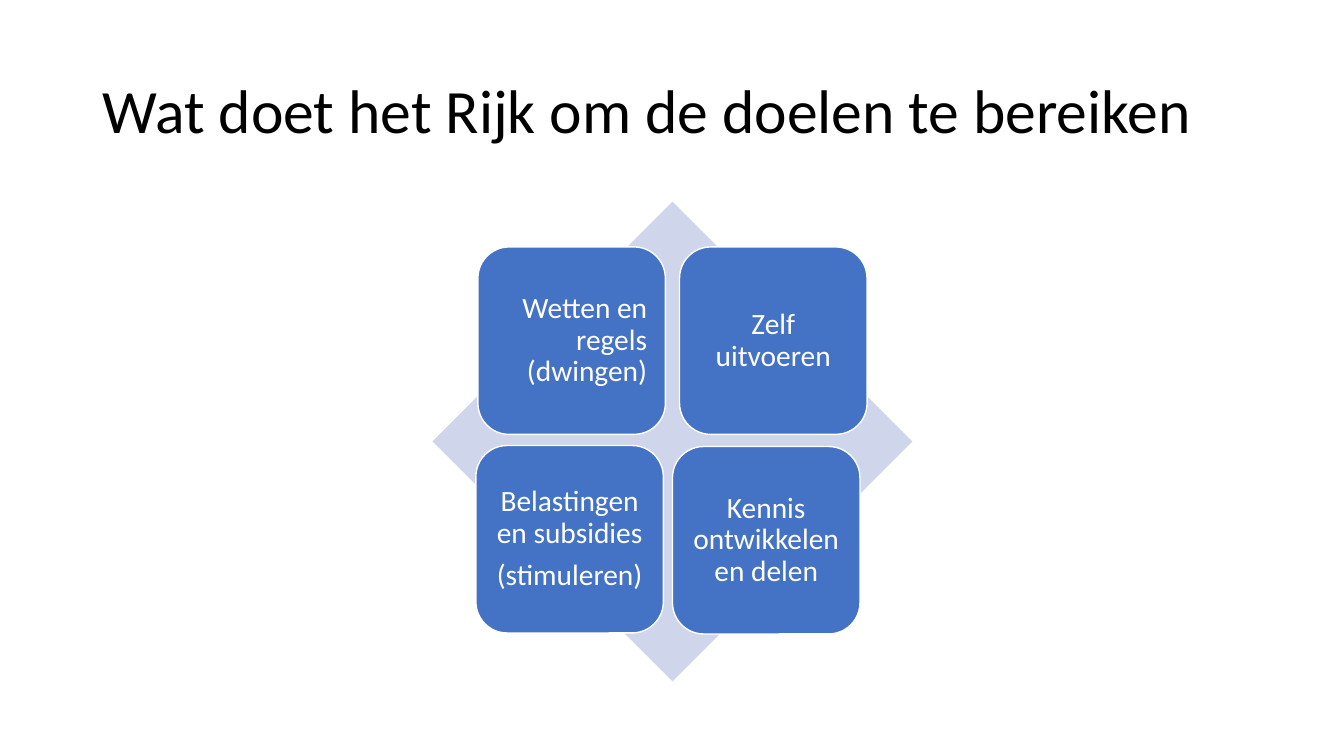
from pptx import Presentation
from pptx.dml.color import RGBColor
from pptx.enum.shapes import MSO_SHAPE
from pptx.enum.text import MSO_ANCHOR, PP_ALIGN
from pptx.util import Inches, Pt

COLORS = {"title": "000000", "diamond": "CFD5EA", "tile": "4472C4", "white": "FFFFFF"}
TILE_SIZE = 1.86
TILES = [
    (0.45, 0.45, PP_ALIGN.RIGHT, ["Wetten en regels (dwingen)"]),
    (2.45, 0.45, PP_ALIGN.CENTER, ["Zelf uitvoeren"]),
    (0.43, 2.42, PP_ALIGN.CENTER, ["Belastingen en subsidies", "(stimuleren)"]),
    (2.38, 2.43, PP_ALIGN.CENTER, ["Kennis ontwikkelen en delen"]),
]


def set_values(target, values):
    """Set each attribute of the target from a dict."""
    for name, value in values.items():
        setattr(target, name, value)


def write_text(shape, lines, size, color, alignment, margins, space_after=0):
    """Write the lines as vertically centred paragraphs in a shape."""
    frame = shape.text_frame
    set_values(frame, {"word_wrap": True, "vertical_anchor": MSO_ANCHOR.MIDDLE, **margins})
    frame.text = "\n".join(lines)
    for paragraph in frame.paragraphs:
        set_values(paragraph, {
            "alignment": alignment,
            "line_spacing": 0.9,
            "space_before": Pt(0),
            "space_after": Pt(space_after),
        })
        for run in paragraph.runs:
            set_values(run.font, {"name": "Calibri", "size": Pt(size)})
            run.font.color.rgb = RGBColor.from_string(COLORS[color])


def add_filled_shape(slide, kind, box, color):
    """Add a shadowless preset shape with a solid fill and no line."""
    shape = slide.shapes.add_shape(kind, *map(Inches, box))
    shape.shadow.inherit = False
    shape.fill.solid()
    shape.fill.fore_color.rgb = RGBColor.from_string(COLORS[color])
    shape.line.fill.background()
    return shape


def add_title(slide, box, text):
    """Place the slide title in its box."""
    title = slide.shapes.add_textbox(*map(Inches, box))
    write_text(title, [text], 44, "title", PP_ALIGN.LEFT, {})


def add_matrix(slide, box):
    """Place the diamond and its four tiles in the box."""
    left, top = box[:2]
    add_filled_shape(slide, MSO_SHAPE.DIAMOND, box, "diamond")
    margins = {f"margin_{side}": Inches(0.09) for side in ("left", "top", "right", "bottom")}
    for across, down, alignment, lines in TILES:
        tile_box = (left + across, top + down, TILE_SIZE, TILE_SIZE)
        tile = add_filled_shape(slide, MSO_SHAPE.ROUNDED_RECTANGLE, tile_box, "tile")
        tile.line.color.rgb = RGBColor.from_string(COLORS["white"])
        tile.line.width = Pt(1)
        write_text(tile, lines, 21, "white", alignment, margins, 7.35)


def main():
    """Build and save the presentation."""
    presentation = Presentation()
    set_values(presentation, {"slide_width": Inches(13.33), "slide_height": Inches(7.5)})
    slide = presentation.slides.add_slide(presentation.slide_layouts[6])
    add_title(slide, (0.92, 0.4, 11.5, 1.45), "Wat doet het Rijk om de doelen te bereiken")
    add_matrix(slide, (4.29, 2, 4.76, 4.76))
    presentation.save("out.pptx")


if __name__ == "__main__":
    main()
